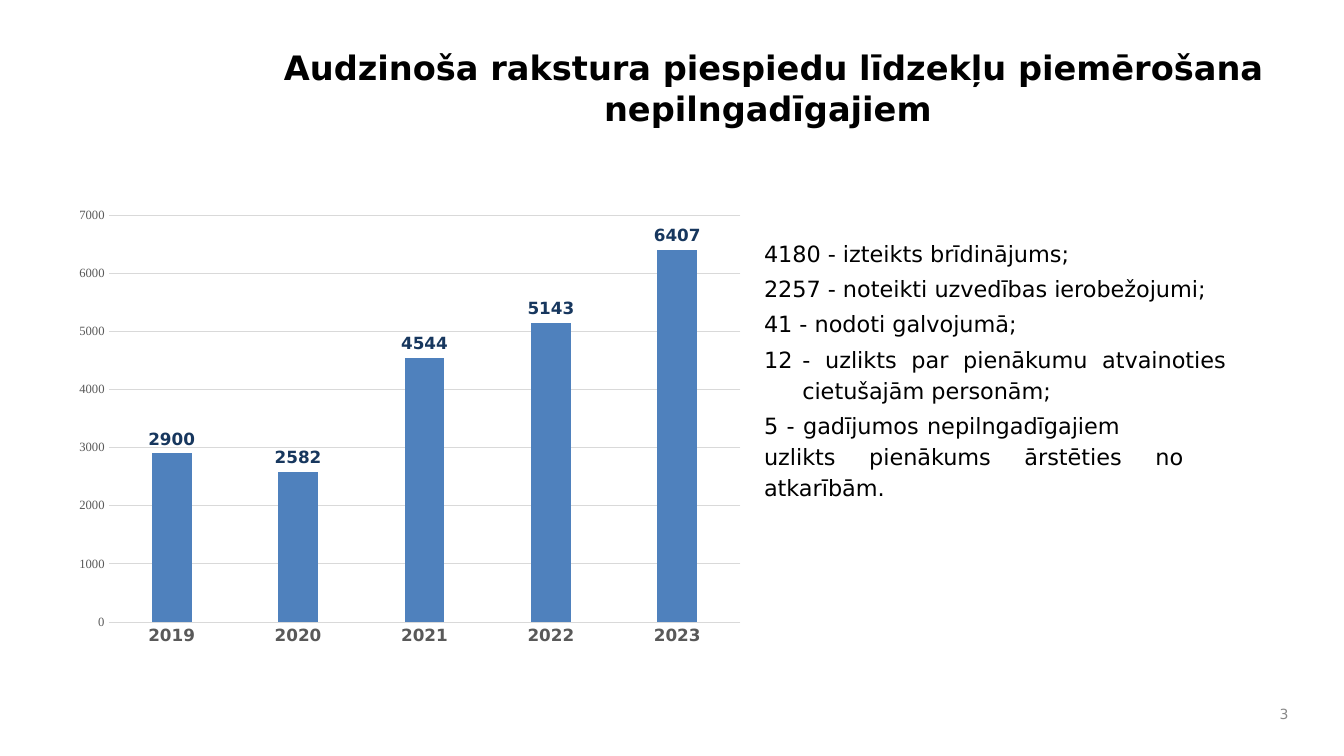
from dataclasses import dataclass

from lxml import etree
from pptx import Presentation
from pptx.chart.data import CategoryChartData
from pptx.dml.color import RGBColor
from pptx.enum.chart import XL_CHART_TYPE, XL_LABEL_POSITION, XL_TICK_MARK
from pptx.enum.text import MSO_ANCHOR, MSO_AUTO_SIZE, PP_ALIGN
from pptx.oxml.ns import qn
from pptx.util import Inches, Pt

COLUMNS = XL_CHART_TYPE.COLUMN_CLUSTERED
OUTSIDE_END = XL_LABEL_POSITION.OUTSIDE_END
NO_TICK = XL_TICK_MARK.NONE
TOP, MIDDLE = MSO_ANCHOR.TOP, MSO_ANCHOR.MIDDLE
NO_AUTOFIT = MSO_AUTO_SIZE.NONE
CENTER, RIGHT, JUSTIFY = PP_ALIGN.CENTER, PP_ALIGN.RIGHT, PP_ALIGN.JUSTIFY
TITLE_ONLY = 5


@dataclass(frozen=True)
class Theme:
    sans: str = "DejaVu Sans"
    serif: str = "Times New Roman"
    black: str = "000000"
    bar: str = "4F81BD"
    value: str = "17375E"
    axis: str = "595959"
    grid: str = "D9D9D9"
    muted: str = "898989"
    title_size: int = 24
    body_size: int = 16
    label_size: int = 12
    small_size: int = 10
    tick_size: int = 9


class SlideBuilder:
    """Places elements by left, top, width and height in percent of the slide."""

    def __init__(self, presentation, theme):
        self.presentation = presentation
        self.theme = theme
        self.slide = presentation.slides.add_slide(
            presentation.slide_layouts[TITLE_ONLY])

    def box(self, left, top, width, height):
        across, down = self.presentation.slide_width, self.presentation.slide_height
        return [int(share * length / 100) for share, length in
                ((left, across), (top, down), (width, across), (height, down))]

    def style(self, font, size, color, bold=False, name=None):
        font.name = name or self.theme.sans
        font.size = Pt(size)
        font.bold = bold
        font.color.rgb = RGBColor.from_string(color)

    def line(self, line_format):
        line_format.color.rgb = RGBColor.from_string(self.theme.grid)
        line_format.width = Pt(0.75)

    def prepare(self, shape, anchor):
        frame = shape.text_frame
        frame.word_wrap = True
        frame.auto_size = NO_AUTOFIT
        frame.vertical_anchor = anchor
        return frame

    def title(self, text, *area):
        shape = self.slide.shapes.title
        shape.left, shape.top, shape.width, shape.height = self.box(*area)
        paragraph = self.prepare(shape, TOP).paragraphs[0]
        paragraph.text = text
        paragraph.alignment = CENTER
        self.style(paragraph.font, self.theme.title_size, self.theme.black, bold=True)

    def text_box(self, texts, area, alignment, size, color, anchor=TOP):
        frame = self.prepare(self.slide.shapes.add_textbox(*self.box(*area)), anchor)
        for index, text in enumerate(texts):
            paragraph = frame.paragraphs[0] if index == 0 else frame.add_paragraph()
            paragraph.text = text
            paragraph.alignment = alignment
            self.style(paragraph.font, size, color)
        return frame.paragraphs

    def measures(self, texts, numbered, *area):
        """Justified list; numbered maps a paragraph index to its number."""
        paragraphs = self.text_box(texts, area, JUSTIFY, self.theme.body_size,
                                   self.theme.black)
        for index, paragraph in enumerate(paragraphs):
            paragraph.line_spacing = 1.15
            paragraph.space_before = Pt(0.2 * self.theme.body_size)
            properties = paragraph.font._element.getparent()
            tabs = etree.Element(qn("a:tabLst"))
            etree.SubElement(tabs, qn("a:tab"), pos=str(Inches(0.2)), algn="l")
            paragraph.font._element.addprevious(tabs)
            if index in numbered:
                properties.set("marL", str(Inches(0.38)))
                properties.set("indent", str(Inches(-0.38)))
                tabs.addprevious(etree.Element(
                    qn("a:buAutoNum"), type="arabicPlain", startAt=str(numbered[index])))

    def page_number(self, number, *area):
        self.text_box([str(number)], area, RIGHT, self.theme.small_size,
                      self.theme.muted, MIDDLE)

    def column_chart(self, name, values, *area):
        theme = self.theme
        data = CategoryChartData()
        data.categories = list(values)
        data.add_series(name, list(values.values()))
        chart = self.slide.shapes.add_chart(COLUMNS, *self.box(*area), data).chart
        chart.has_legend = False
        chart.has_title = False
        self.style(chart.font, theme.small_size, theme.black, name=theme.serif)

        # Columns and their labels
        plot = chart.plots[0]
        plot.gap_width, plot.overlap = 219, -27
        plot.vary_by_categories = False
        fill = plot.series[0].format.fill
        fill.solid()
        fill.fore_color.rgb = RGBColor.from_string(theme.bar)
        labels = plot.series[0].data_labels
        labels.show_value = True
        labels.position = OUTSIDE_END
        self.style(labels.font, theme.label_size, theme.value, bold=True)

        # Axes
        years, counts = chart.category_axis, chart.value_axis
        for axis in (years, counts):
            axis.major_tick_mark = axis.minor_tick_mark = NO_TICK
        self.style(years.tick_labels.font, theme.label_size, theme.axis, bold=True)
        self.line(years.format.line)
        self.style(counts.tick_labels.font, theme.tick_size, theme.axis,
                   name=theme.serif)
        counts.format.line.fill.background()
        counts.minimum_scale, counts.maximum_scale = 0, 7000
        counts.major_unit = 1000
        self.line(counts.major_gridlines.format.line)


def main():
    presentation = Presentation()
    presentation.slide_width, presentation.slide_height = Inches(13.33), Inches(7.5)
    builder = SlideBuilder(presentation, Theme())

    # Heading
    builder.title("Audzinoša rakstura piespiedu līdzekļu piemērošana nepilngadīgajiem ",
                  18.45, 5.6, 78.24, 15.07)

    # Cases by year
    cases = {"2019": 2900, "2020": 2582, "2021": 4544, "2022": 5143, "2023": 6407}
    builder.column_chart("Series 1", cases, 4.88, 26.27, 51.24, 60.4)

    # Measures applied
    builder.measures([
        "4180 - izteikts brīdinājums;",
        "2257 - noteikti uzvedības ierobežojumi;",
        "41 - nodoti galvojumā;",
        "- uzlikts par pienākumu atvainoties \tcietušajām personām;",
        "5 - gadījumos nepilngadīgajiem \t\tuzlikts pienākums ārstēties no \tatkarībām.",
    ], {3: 12}, 56.11, 30.53, 35.63, 46.93)

    # Footer
    builder.page_number(3, 93.32, 92.27, 3.3, 4.4)

    presentation.save("out.pptx")


if __name__ == "__main__":
    main()
